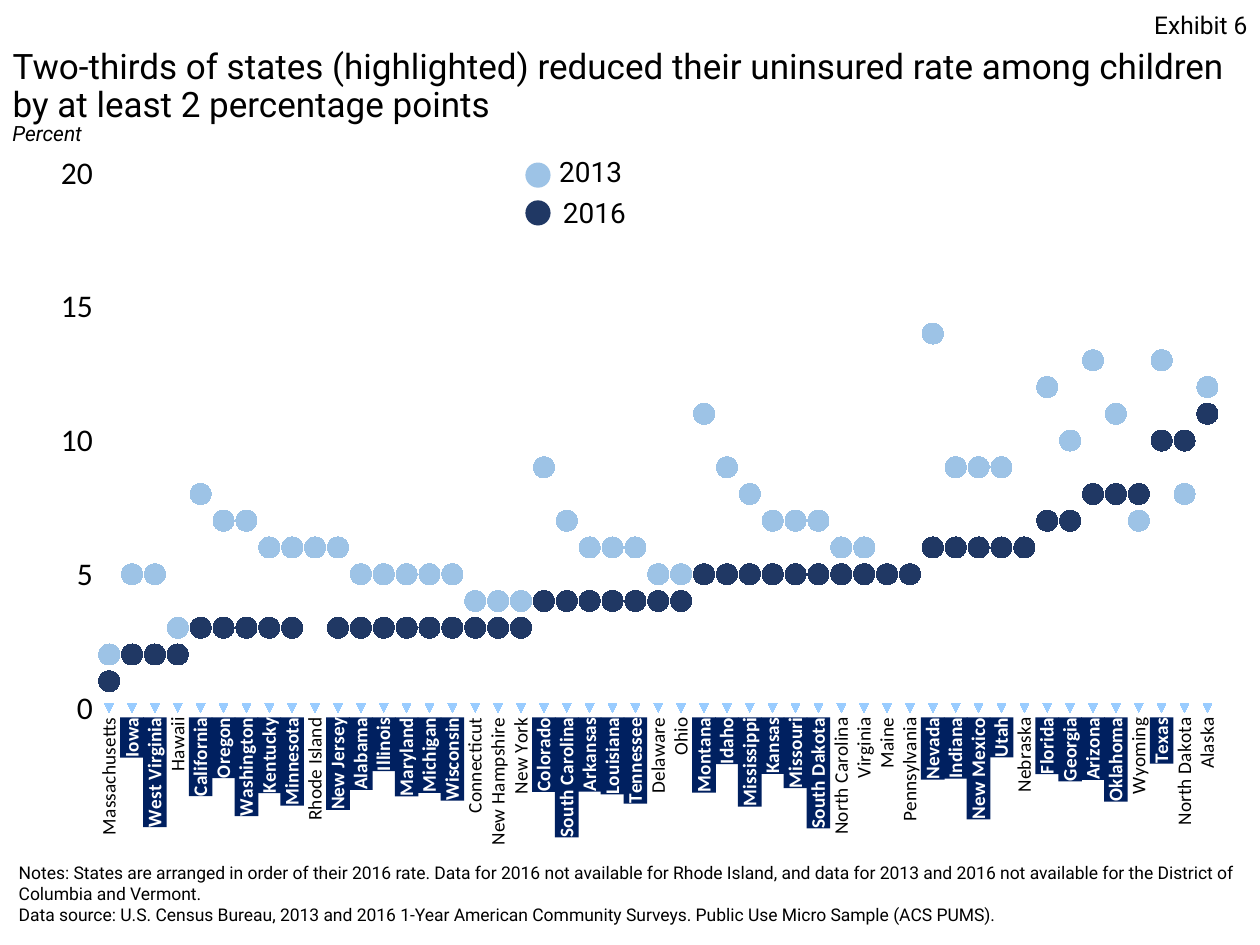
"""Build a one-slide dot chart of children's uninsured rates by state."""
from typing import NamedTuple

from lxml.etree import SubElement
from pptx import Presentation
from pptx.chart.data import CategoryChartData
from pptx.dml.color import RGBColor
from pptx.enum.chart import XL_CHART_TYPE, XL_LABEL_POSITION, XL_MARKER_STYLE, XL_TICK_MARK
from pptx.enum.shapes import MSO_SHAPE
from pptx.enum.text import MSO_ANCHOR, MSO_AUTO_SIZE, PP_ALIGN
from pptx.oxml import parse_xml
from pptx.oxml.ns import nsdecls, qn
from pptx.util import Inches, Pt

BLACK = RGBColor(0x00, 0x00, 0x00)
WHITE = RGBColor(0xFF, 0xFF, 0xFF)
LIGHT = RGBColor(0x9D, 0xC3, 0xE6)
DARK = RGBColor(0x20, 0x38, 0x64)
NAVY = RGBColor(0x00, 0x20, 0x60)
PALE = RGBColor(0x99, 0xCC, 0xFF)
WIDTH, HEIGHT = Inches(10), Inches(7.5)
COLS, ROWS = 100, 75
PLOT = {"x": 0.063, "y": 0.047, "w": 0.926, "h": 0.757}


class State(NamedTuple):
    name: str
    rate_2013: int
    rate_2016: int | None

    @property
    def highlighted(self) -> bool:
        return self.rate_2016 is not None and self.rate_2013 - self.rate_2016 >= 2


class Box(NamedTuple):
    col: float
    row: float
    cols: float
    rows: float

    def emu(self) -> tuple[int, int, int, int]:
        cw, rh = WIDTH / COLS, HEIGHT / ROWS
        return int(self.col * cw), int(self.row * rh), int(self.cols * cw), int(self.rows * rh)


class Note(NamedTuple):
    text: str
    box: Box
    size: int
    italic: bool = False
    align: PP_ALIGN = PP_ALIGN.LEFT
    anchor: MSO_ANCHOR = MSO_ANCHOR.TOP


class Key(NamedTuple):
    year: str
    color: RGBColor
    dot: Box
    label: Box


STATES = [
    State("Massachusetts", 2, 1), State("Iowa", 5, 2), State("West Virginia", 5, 2),
    State("Hawaii", 3, 2), State("California", 8, 3), State("Oregon", 7, 3),
    State("Washington", 7, 3), State("Kentucky", 6, 3), State("Minnesota", 6, 3),
    State("Rhode Island", 6, None), State("New Jersey", 6, 3), State("Alabama", 5, 3),
    State("Illinois", 5, 3), State("Maryland", 5, 3), State("Michigan", 5, 3),
    State("Wisconsin", 5, 3), State("Connecticut", 4, 3), State("New Hampshire", 4, 3),
    State("New York", 4, 3), State("Colorado", 9, 4), State("South Carolina", 7, 4),
    State("Arkansas", 6, 4), State("Louisiana", 6, 4), State("Tennessee", 6, 4),
    State("Delaware", 5, 4), State("Ohio", 5, 4), State("Montana", 11, 5),
    State("Idaho", 9, 5), State("Mississippi", 8, 5), State("Kansas", 7, 5),
    State("Missouri", 7, 5), State("South Dakota", 7, 5), State("North Carolina", 6, 5),
    State("Virginia", 6, 5), State("Maine", 5, 5), State("Pennsylvania", 5, 5),
    State("Nevada", 14, 6), State("Indiana", 9, 6), State("New Mexico", 9, 6),
    State("Utah", 9, 6), State("Nebraska", 6, 6), State("Florida", 12, 7),
    State("Georgia", 10, 7), State("Arizona", 13, 8), State("Oklahoma", 11, 8),
    State("Wyoming", 7, 8), State("Texas", 13, 10), State("North Dakota", 8, 10),
    State("Alaska", 12, 11),
]
KEYS = [
    Key("2013", LIGHT, Box(41.7, 12.9, 2, 2), Box(43.4, 11.8, 8, 3.7)),
    Key("2016", DARK, Box(41.7, 15.9, 2, 2), Box(43.7, 15, 8, 3.7)),
]
TITLE = Note("Two-thirds of states (highlighted) reduced their uninsured rate among children "
             "by at least 2 percentage points", Box(0, 3.4, 100, 8), 20)
NOTES = [
    Note("Percent", Box(0, 9.1, 10.9, 3), 12, italic=True),
    Note("Notes: States are arranged in order of their 2016 rate. Data for 2016 not available for "
         "Rhode Island, and data for 2013 and 2016 not available for the District of Columbia and "
         "Vermont.\vData source: U.S. Census Bureau, 2013 and 2016 1-Year American Community "
         "Surveys. Public Use Micro Sample (ACS PUMS).",
         Box(0.5, 67.8, 98.5, 6.1), 10, anchor=MSO_ANCHOR.BOTTOM),
    Note("Exhibit 6", Box(82.2, 0, 17.8, 4), 14, align=PP_ALIGN.RIGHT, anchor=MSO_ANCHOR.MIDDLE),
] + [Note(k.year, k.label, 16) for k in KEYS]


def set_font(font, name: str, size: int, color: RGBColor, bold: bool = False) -> None:
    font.name, font.size, font.bold = name, Pt(size), bold
    font.color.rgb = color


def write(sp, note: Note) -> None:
    tf = sp.text_frame
    tf.word_wrap, tf.auto_size = True, MSO_AUTO_SIZE.NONE
    tf.vertical_anchor = note.anchor
    p = tf.paragraphs[0]
    p.text, p.alignment = note.text, note.align
    set_font(p.font, "Roboto", note.size, BLACK)
    p.font.italic = note.italic


def add_title(s, note: Note) -> None:
    sp = s.shapes.title
    sp.left, sp.top, sp.width, sp.height = note.box.emu()
    write(sp, note)
    sp.text_frame.paragraphs[0].line_spacing = 0.9


def add_dot(s, key: Key) -> None:
    sp = s.shapes.add_shape(MSO_SHAPE.OVAL, *key.dot.emu())
    sp.shadow.inherit = False
    sp.fill.solid()
    sp.fill.fore_color.rgb = key.color
    sp.line.fill.background()


def style_markers(series, style: XL_MARKER_STYLE, size: int, color: RGBColor) -> None:
    series.smooth = False
    series.format.line.fill.background()
    series.marker.style, series.marker.size = style, size
    series.marker.format.fill.solid()
    series.marker.format.fill.fore_color.rgb = color
    series.marker.format.line.fill.background()


def label_states(series) -> None:
    labels = series.data_labels
    labels.show_category_name, labels.show_value = True, False
    labels.position = XL_LABEL_POSITION.BELOW
    set_font(labels.font, "Calibri", 11, BLACK)
    for i, state in enumerate(STATES):
        if state.highlighted:
            label = series.points[i].data_label
            set_font(label.font, "Calibri", 11, WHITE, bold=True)
            label.position = XL_LABEL_POSITION.BELOW
    root = labels._element
    for txt in root.iter(qn("c:txPr")):
        body = txt.find(qn("a:bodyPr"))
        body.set("rot", "-5400000")
        body.set("vert", "horz")
    for lbl in root.findall(qn("c:dLbl")):
        lbl.find(qn("c:showVal")).set("val", "0")
        lbl.find(qn("c:showCatName")).set("val", "1")
        lbl.find(qn("c:txPr")).addprevious(parse_xml(
            f'<c:spPr {nsdecls("c", "a")}><a:solidFill><a:srgbClr val="{NAVY}"/>'
            '</a:solidFill></c:spPr>'))


def place_plot(chart) -> None:
    area = chart._chartSpace.chart.plotArea
    for old in area.findall(qn("c:layout")):
        area.remove(old)
    layout = parse_xml(f'<c:layout {nsdecls("c")}><c:manualLayout/></c:layout>')
    parts = {"layoutTarget": "inner", "xMode": "edge", "yMode": "edge"} | PLOT
    for tag, val in parts.items():
        SubElement(layout[0], qn(f"c:{tag}")).set("val", str(val))
    area.insert(0, layout)


def add_rates(s, box: Box) -> None:
    data = CategoryChartData()
    data.categories = [st.name for st in STATES]
    data.add_series("2013", [st.rate_2013 for st in STATES])
    data.add_series("2016", [st.rate_2016 for st in STATES])
    data.add_series("State", [0] * len(STATES))
    chart = s.shapes.add_chart(XL_CHART_TYPE.LINE_MARKERS, *box.emu(), data).chart
    chart.has_title = chart.has_legend = False
    set_font(chart.font, "Calibri", 18, BLACK)
    chart.category_axis.visible = False
    axis = chart.value_axis
    axis.minimum_scale, axis.maximum_scale, axis.major_unit = 0, 20, 5
    axis.has_major_gridlines = False
    axis.major_tick_mark = axis.minor_tick_mark = XL_TICK_MARK.NONE
    axis.format.line.fill.background()
    plot = chart.plots[0]
    plot.vary_by_categories = False
    for series, key in zip(plot.series, KEYS):
        style_markers(series, XL_MARKER_STYLE.CIRCLE, 12, key.color)
    style_markers(plot.series[2], XL_MARKER_STYLE.AUTOMATIC, 5, PALE)
    label_states(plot.series[2])
    place_plot(chart)


def main() -> None:
    prs = Presentation()
    prs.slide_width, prs.slide_height = WIDTH, HEIGHT
    s = prs.slides.add_slide(prs.slide_layouts[5])
    add_title(s, TITLE)
    add_rates(s, Box(1.7, 11.1, 96.1, 56.1))
    for key in KEYS:
        add_dot(s, key)
    for note in NOTES:
        write(s.shapes.add_textbox(*note.box.emu()), note)
    prs.save("out.pptx")


if __name__ == "__main__":
    main()
